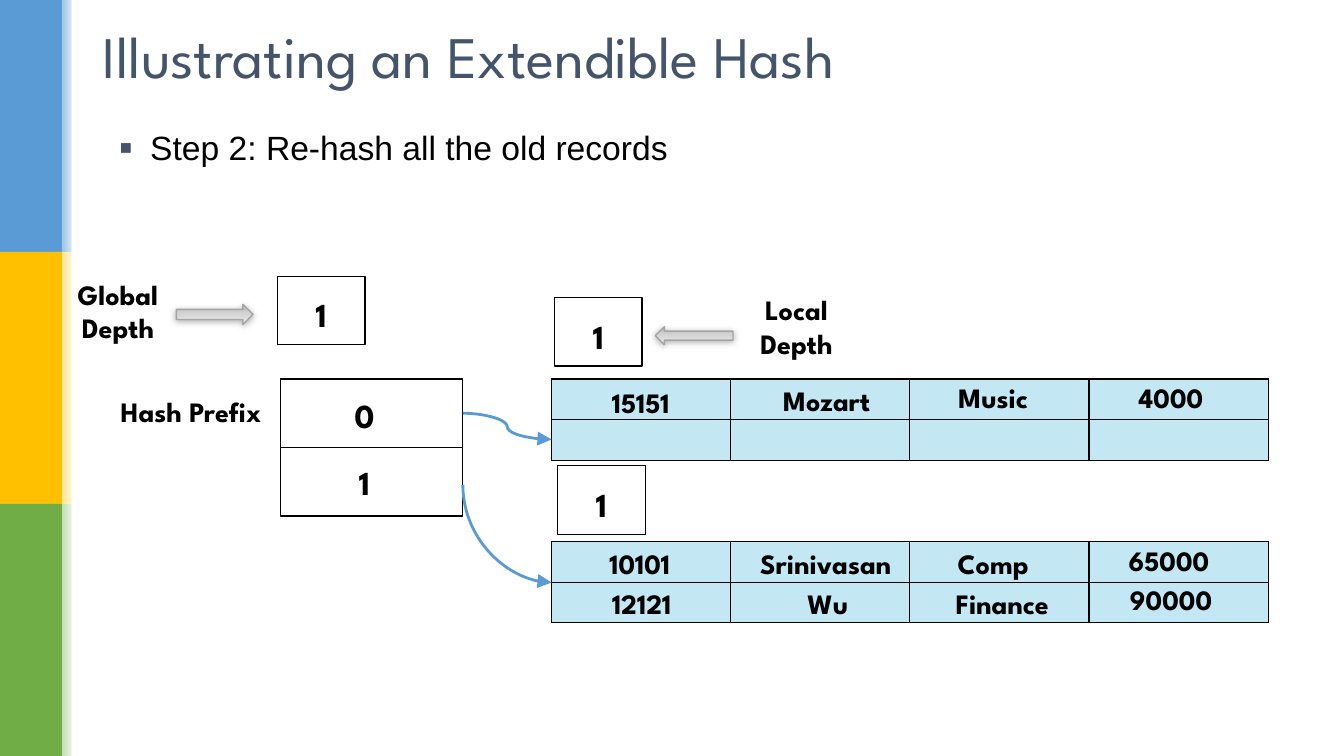
from copy import deepcopy

from lxml.etree import SubElement
from pptx import Presentation
from pptx.dml.color import RGBColor
from pptx.enum.shapes import MSO_CONNECTOR, MSO_SHAPE
from pptx.enum.text import MSO_ANCHOR, MSO_AUTO_SIZE, PP_ALIGN
from pptx.oxml.ns import qn
from pptx.util import Inches, Pt

COLORS = {
    "black": "000000", "white": "FFFFFF", "title": "44546A", "record": "C3E7F3",
    "blue": "5B9BD5", "gold": "FFC000", "green": "70AD47",
    "pale_blue": "9DC3E6", "pale_gold": "FFE699", "pale_green": "C5E0B4",
    "arrow_dark": "B1B1B1", "arrow_mid": "D5D5D5", "arrow_light": "EDEDED",
    "arrow_edge": "A5A5A5",
}
HEADING_FONT = "League Spartan"
FIELD_SPANS = ((0.38, 1.01), (1.79, 1.88), (3.72, 1.32), (5.56, 1.17))


def rgb(name):
    """Return the named palette colour."""
    return RGBColor.from_string(COLORS[name])


def write(frame, text, size, font=HEADING_FONT, color="black", bold=True,
          align=PP_ALIGN.CENTER):
    """Put one formatted paragraph into a text frame."""
    frame.text = text
    paragraph = frame.paragraphs[0]
    paragraph.alignment = align
    for run in paragraph.runs:
        run.font.name, run.font.size, run.font.bold = font, Pt(size), bold
        run.font.color.rgb = rgb(color)


def add_plain(slide, preset, box, fill=None, line=None):
    """Add a shadowless shape with optional fill and outline."""
    shape = slide.shapes.add_shape(preset, *map(Inches, box))
    shape.shadow.inherit = False
    if fill:
        shape.fill.solid()
        shape.fill.fore_color.rgb = rgb(fill)
    else:
        shape.fill.background()
    if line:
        shape.line.color.rgb = rgb(line)
        shape.line.width = Pt(1)
    else:
        shape.line.fill.background()
    return shape


def shade(shape, stops, angle):
    """Fill a shape with a linear gradient of (position, colour) stops."""
    shape.fill.gradient()
    shape.fill.gradient_angle = angle
    stop_list = shape._element.spPr.find(".//" + qn("a:gsLst"))
    while len(stop_list) < len(stops):
        stop_list.append(deepcopy(stop_list[0]))
    for stop, (position, color) in zip(shape.fill.gradient_stops, stops):
        stop.position = position
        stop.color.rgb = rgb(color)


def add_side_band(slide, left, top, width, height):
    """Draw the three coloured blocks with their fading edges."""
    block_height = height / 3
    for index, color in enumerate(("blue", "gold", "green")):
        y = top + index * block_height
        add_plain(slide, MSO_SHAPE.RECTANGLE, (left, y, width, block_height), color)
        edge = add_plain(slide, MSO_SHAPE.RECTANGLE,
                         (left + width, y, 0.16, block_height), color)
        shade(edge, [(0, "pale_" + color), (1, "white")], 0)
    add_plain(slide, MSO_SHAPE.RECTANGLE, (left + 0.71, top, 0.05, height), "white")


def place(placeholder, box):
    """Move a placeholder and centre its text vertically."""
    placeholder.left, placeholder.top, placeholder.width, placeholder.height = map(Inches, box)
    frame = placeholder.text_frame
    frame.auto_size = MSO_AUTO_SIZE.NONE
    frame.vertical_anchor = MSO_ANCHOR.MIDDLE
    return frame


def add_heading(slide, title_box, step_box):
    """Fill the title and the bulleted step."""
    write(place(slide.shapes.title, title_box), "Illustrating an Extendible Hash",
          42, color="title", bold=False, align=PP_ALIGN.LEFT)
    step = place(slide.placeholders[1], step_box)
    write(step, "Step 2: Re-hash all the old records", 24, "Arial",
          bold=False, align=PP_ALIGN.LEFT)
    paragraph = step.paragraphs[0]
    paragraph.space_before = Pt(0)
    properties = paragraph._p.get_or_add_pPr()
    properties.set("marL", str(Inches(0.3)))
    properties.set("indent", str(-Inches(0.3)))
    bullet_color = SubElement(properties, qn("a:buClr"))
    SubElement(bullet_color, qn("a:srgbClr"), val=COLORS["title"])
    SubElement(properties, qn("a:buSzPct"), val="60000")
    SubElement(properties, qn("a:buFont"), typeface="Arial")
    SubElement(properties, qn("a:buChar"), char="■")


def add_label(slide, text, box):
    """Add a bold centred caption."""
    frame = slide.shapes.add_textbox(*map(Inches, box)).text_frame
    frame.word_wrap = True
    frame.vertical_anchor = MSO_ANCHOR.MIDDLE
    write(frame, text, 20)


def add_number_box(slide, text, box, shift_left=0, shift_down=0):
    """Add an outlined box holding one number."""
    frame = add_plain(slide, MSO_SHAPE.RECTANGLE, box, line="black").text_frame
    frame.vertical_anchor = MSO_ANCHOR.MIDDLE
    frame.margin_left = frame.margin_bottom = 0
    frame.margin_right = Inches(2 * shift_left)
    frame.margin_top = Inches(2 * shift_down)
    write(frame, text, 24)


def add_depth(slide, left, top):
    """Add a bucket depth box at the given corner."""
    add_number_box(slide, "1", (left, top, 0.87, 0.68), shift_down=0.04)


def add_pointer(slide, preset, box):
    """Add a grey block arrow with a soft shadow."""
    arrow = add_plain(slide, preset, box, "arrow_mid", "arrow_edge")
    shade(arrow, [(0, "arrow_dark"), (0.48, "arrow_mid"), (1, "arrow_light")], 270)
    effects = arrow._element.spPr.find(qn("a:effectLst"))
    shadow = SubElement(effects, qn("a:outerShdw"), blurRad=str(Pt(5)),
                        dist=str(Pt(1)), dir="5400000", rotWithShape="0")
    shadow_color = SubElement(shadow, qn("a:srgbClr"), val=COLORS["black"])
    SubElement(shadow_color, qn("a:alpha"), val="32000")


def add_directory(slide, left, top, width, row_height):
    """Draw the hash prefix directory with its label."""
    add_label(slide, "Hash Prefix", (left - 1.79, top - 0.02, width, row_height))
    for row, (prefix, drop) in enumerate((("0", 0.02), ("1", 0))):
        add_number_box(slide, prefix, (left, top + row * row_height, width, row_height),
                       shift_left=0.07, shift_down=drop)


def add_bucket(slide, left, top, width, height):
    """Draw the two-row grid of a bucket."""
    table = slide.shapes.add_table(2, 4, *map(Inches, (left, top, width, height))).table
    table.first_row = table.horz_banding = False
    for cell in table.iter_cells():
        cell.margin_top = cell.margin_bottom = 0
        properties = cell._tc.get_or_add_tcPr()
        for side in ("a:lnL", "a:lnR", "a:lnT", "a:lnB"):
            border = SubElement(properties, qn(side), w=str(Pt(1)))
            ink = SubElement(border, qn("a:solidFill"))
            SubElement(ink, qn("a:srgbClr"), val=COLORS["black"])
        cell.fill.solid()
        cell.fill.fore_color.rgb = rgb("record")


def add_record(slide, left, top, fields):
    """Write a record's (text, shift, drop) fields over its bucket row."""
    for (offset, width), (text, shift, drop) in zip(FIELD_SPANS, fields):
        add_label(slide, text, (left + offset + shift, top + drop, width, 0.47))


def add_link(slide, start_x, start_y, end_x, end_y, starts_down=False):
    """Draw a curved arrow from a directory entry to a bucket."""
    if starts_down:
        middle_x, middle_y = (start_x + end_x) / 2, (start_y + end_y) / 2
        half_width, half_height = (end_y - start_y) / 2, (end_x - start_x) / 2
        start_x, end_x = middle_x - half_width, middle_x + half_width
        start_y, end_y = middle_y - half_height, middle_y + half_height
    link = slide.shapes.add_connector(MSO_CONNECTOR.CURVE,
                                      *map(Inches, (start_x, start_y, end_x, end_y)))
    link.line.color.rgb = rgb("blue")
    link.line.width = Pt(2)
    properties = link._element.spPr
    if starts_down:
        properties.find(qn("a:prstGeom")).set("prst", "curvedConnector2")
        frame = properties.find(qn("a:xfrm"))
        frame.set("rot", "16200000")
        frame.set("flipH", "1")
    SubElement(properties.find(qn("a:ln")), qn("a:tailEnd"), type="triangle", w="lg", len="lg")
    SubElement(properties, qn("a:effectLst"))


def main():
    """Build and save the slide."""
    deck = Presentation()
    deck.slide_width, deck.slide_height = Inches(13.33), Inches(7.5)
    slide = deck.slides.add_slide(deck.slide_layouts[1])
    add_side_band(slide, 0, 0, 0.62, 7.5)
    add_heading(slide, (0.92, 0.12, 11.5, 0.86), (1.09, 1.21, 5.82, 0.5))
    add_label(slide, "Global Depth", (0.59, 2.76, 1.16, 0.65))
    add_pointer(slide, MSO_SHAPE.RIGHT_ARROW, (1.75, 3.02, 0.76, 0.2))
    add_depth(slide, 2.75, 2.74)
    add_directory(slide, 2.78, 3.76, 1.81, 0.68)
    add_depth(slide, 5.5, 2.95)
    add_pointer(slide, MSO_SHAPE.LEFT_ARROW, (6.5, 3.24, 0.77, 0.18))
    add_label(slide, "Local Depth", (7.32, 2.91, 1.16, 0.65))
    add_depth(slide, 5.53, 4.62)
    for top in (3.76, 5.37):
        add_bucket(slide, 5.47, top, 7.11, 0.81)
    add_record(slide, 5.47, 3.76, [("15151", 0, 0), ("Mozart", 0, -0.02),
                                   ("Music", 0, -0.05), ("4000", 0, -0.05)])
    add_record(slide, 5.47, 5.35, [("10101", -0.01, 0), ("Srinivasan", -0.01, 0),
                                   ("Comp", 0, 0), ("65000", -0.02, -0.03)])
    add_record(slide, 5.47, 5.75, [("12121", 0.01, 0), ("Wu", 0.01, 0),
                                   ("Finance", 0.09, 0), ("90000", 0, -0.04)])
    add_link(slide, 4.59, 4.1, 5.47, 4.36)
    add_link(slide, 4.59, 4.81, 5.47, 5.78, starts_down=True)
    deck.save("out.pptx")


if __name__ == "__main__":
    main()
